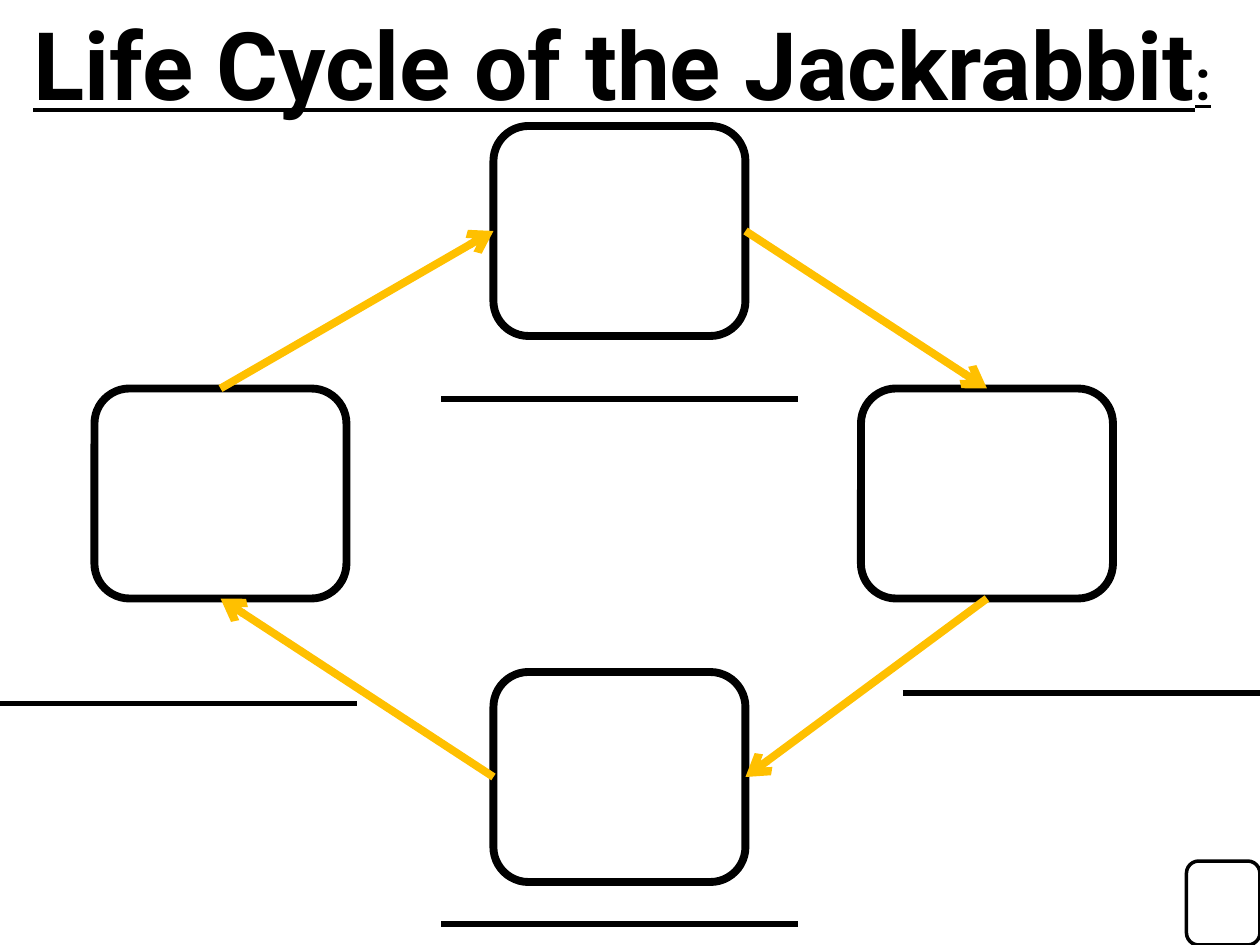
from lxml.etree import SubElement
from pptx import Presentation
from pptx.dml.color import RGBColor
from pptx.enum.shapes import MSO_CONNECTOR, MSO_SHAPE
from pptx.enum.text import MSO_AUTO_SIZE
from pptx.oxml.ns import qn
from pptx.util import Pt

# Content: all lengths in points
TITLE = [("Life Cycle of the Jackrabbit", "title"), (":", "colon")]
TITLE_BOX = (12, 0, 688, 73)
STAGE_SIZE = (144, 120)
STAGES = {  # left, top
    "top": (282, 72),
    "right": (492, 222),
    "left": (54, 222),
    "bottom": (282, 384),
}
ARROWS = [  # from stage, side, to stage, side
    ("top", "right", "right", "top"),
    ("right", "bottom", "bottom", "right"),
    ("bottom", "left", "left", "bottom"),
    ("left", "top", "top", "left"),
]
LABEL_WIDTH = 204
LABEL_LINES = [(252, 228), (516, 396), (252, 528), (0, 402)]
CORNER_BOX = (678, 492, 42, 48)
SITES = {"top": 0, "left": 1, "bottom": 2, "right": 3}

THEME = {
    "ink": RGBColor(0, 0, 0),
    "paper": RGBColor(255, 255, 255),
    "arrow": RGBColor(255, 192, 0),
    "font": {"name": "Roboto", "bold": True, "underline": True},
    "sizes": {"title": 54, "colon": 32},
    "lines": {"stage": 4.5, "arrow": 4.5, "label": 3, "corner": 2},
}


def set_line(sp, part, color):
    sp.line.color.rgb = THEME[color]
    sp.line.width = Pt(THEME["lines"][part])


def add_box(shapes, part, *box):
    sp = shapes.add_shape(MSO_SHAPE.ROUNDED_RECTANGLE, *map(Pt, box))
    sp.shadow.inherit = False
    sp.fill.solid()
    sp.fill.fore_color.rgb = THEME["paper"]
    set_line(sp, part, "ink")
    return sp


def add_line(shapes, part, color, *ends):
    sp = shapes.add_connector(MSO_CONNECTOR.STRAIGHT, *map(Pt, ends))
    set_line(sp, part, color)
    SubElement(sp._element.spPr, qn("a:effectLst"))
    return sp


def add_title(shapes):
    tf = shapes.add_textbox(*map(Pt, TITLE_BOX)).text_frame
    for name, value in {"word_wrap": False,
                        "auto_size": MSO_AUTO_SIZE.SHAPE_TO_FIT_TEXT}.items():
        setattr(tf, name, value)
    p = tf.paragraphs[0]
    for text, style in TITLE:
        r = p.add_run()
        r.text = text
        for name, value in THEME["font"].items():
            setattr(r.font, name, value)
        r.font.size = Pt(THEME["sizes"][style])
        r.font.color.rgb = THEME["ink"]


def main():
    prs = Presentation()
    prs.slide_width, prs.slide_height = Pt(720), Pt(540)
    s = prs.slides.add_slide(prs.slide_layouts[6])
    shapes = s.shapes

    add_title(shapes)

    # Stage boxes
    boxes = {name: add_box(shapes, "stage", *pos, *STAGE_SIZE)
             for name, pos in STAGES.items()}

    # Cycle arrows, glued to the boxes
    for start, start_side, end, end_side in ARROWS:
        sp = add_line(shapes, "arrow", "arrow", 0, 0, 0, 0)
        sp.begin_connect(boxes[start], SITES[start_side])
        sp.end_connect(boxes[end], SITES[end_side])
        SubElement(sp.line._get_or_add_ln(), qn("a:tailEnd"), type="arrow")

    # Blank lines for the stage names
    for x, y in LABEL_LINES:
        add_line(shapes, "label", "ink", x, y, x + LABEL_WIDTH, y)

    # Corner box
    add_box(shapes, "corner", *CORNER_BOX)

    prs.save("out.pptx")


if __name__ == "__main__":
    main()
